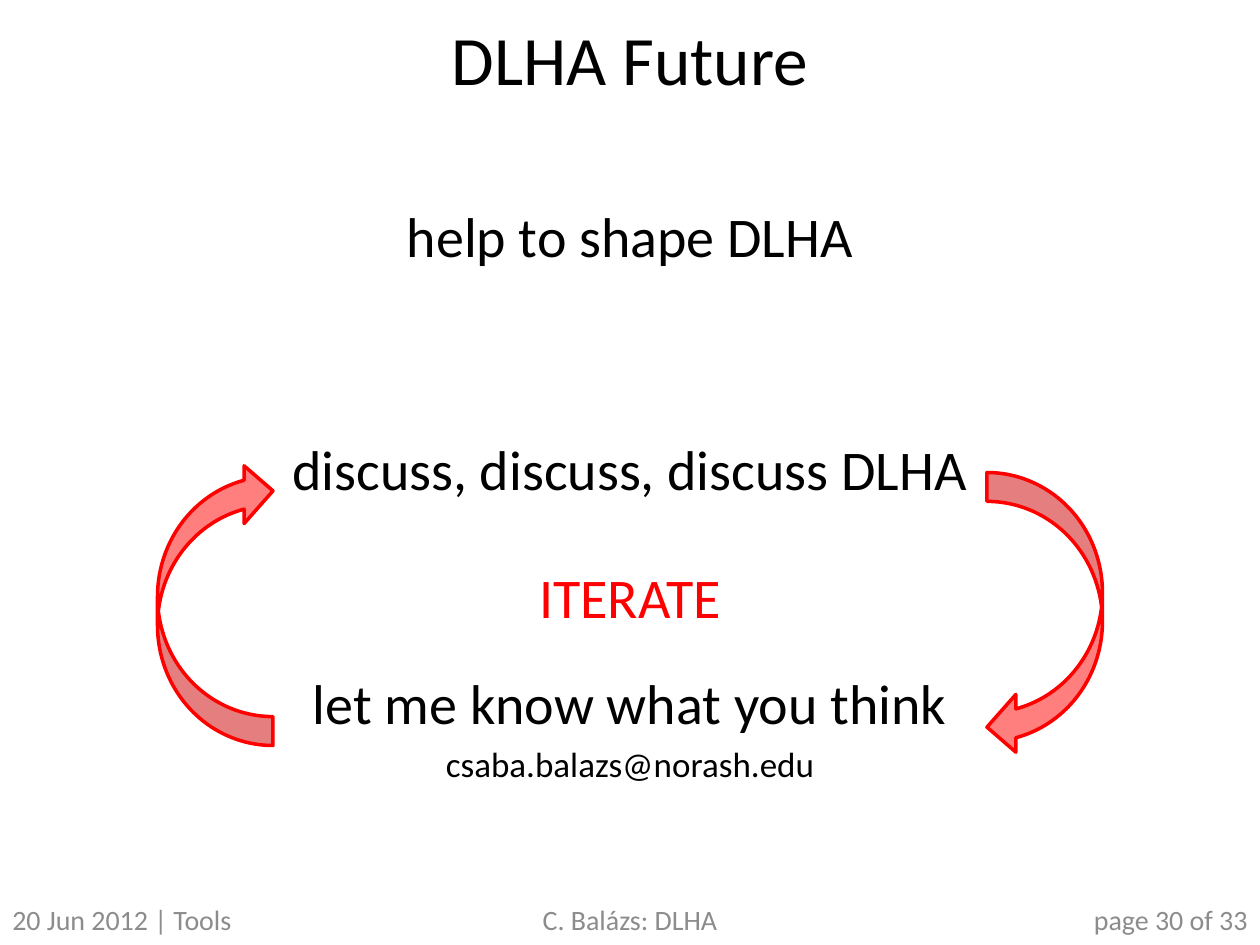
from dataclasses import dataclass

from lxml import etree
from pptx import Presentation
from pptx.dml.color import RGBColor
from pptx.enum.shapes import MSO_SHAPE as Shape
from pptx.enum.text import MSO_ANCHOR as Anchor, PP_ALIGN as Align
from pptx.oxml.ns import qn
from pptx.util import Inches, Pt

COLS, ROWS = 120, 90
WIDTH, HEIGHT = Inches(10), Inches(7.5)


@dataclass(frozen=True)
class Theme:
    font: str = "Calibri"
    ink: str = "000000"
    accent: str = "FF0000"
    muted: str = "8C8C8C"
    title: float = 39.6
    body: float = 32
    small: float = 20
    footer: float = 16
    outline: float = 2
    opacity: int = 50


THEME = Theme()


def place(box):
    col, row, cols, rows = box
    return (int(WIDTH * col / COLS), int(HEIGHT * row / ROWS),
            int(WIDTH * cols / COLS), int(HEIGHT * rows / ROWS))


def add_text(slide, box, lines, color, align=Align.CENTER, anchor=Anchor.TOP):
    tf = slide.shapes.add_textbox(*place(box)).text_frame
    tf.word_wrap = True
    tf.vertical_anchor = anchor
    for i, (text, size, gap) in enumerate(lines):
        p = tf.paragraphs[0] if i == 0 else tf.add_paragraph()
        p.text = text
        p.alignment = align
        p.space_before = Pt(gap)
        p.font.name = THEME.font
        p.font.size = Pt(size)
        p.font.color.rgb = RGBColor.from_string(color)
    return tf


def add_title(slide, box):
    add_text(slide, box, [("DLHA Future", THEME.title, 0)], THEME.ink,
             anchor=Anchor.MIDDLE)


def add_body(slide, box):
    step = 95
    lines = [
        ("help to shape DLHA", THEME.body, 0),
        ("discuss, discuss, discuss DLHA", THEME.body, step),
        ("let me know what you think", THEME.body, step),
        ("csaba.balazs@norash.edu", THEME.small, 4),
    ]
    tf = add_text(slide, box, lines, THEME.ink)
    tf.margin_top = Inches(0.68)


def add_arrow(slide, box, rotation):
    s = slide.shapes.add_shape(Shape.CURVED_LEFT_ARROW, *place(box))
    s.rotation = rotation
    s.shadow.inherit = False
    s.fill.solid()
    s.fill.fore_color.rgb = RGBColor.from_string(THEME.accent)
    color = s.fill._xPr.find(qn("a:solidFill"))[0]
    etree.SubElement(color, qn("a:alpha"), val=str(THEME.opacity * 1000))
    s.line.color.rgb = RGBColor.from_string(THEME.accent)
    s.line.width = Pt(THEME.outline)


def add_cycle(slide, box):
    col, row, cols, rows = box
    arrow_cols, arrow_rows = 11, 27
    add_arrow(slide, (col + cols - arrow_cols, row + 1, arrow_cols, arrow_rows), 0)
    add_arrow(slide, (col, row, arrow_cols, arrow_rows), 180)
    label_cols = 34
    label = (col + (cols - label_cols) / 2, row + 9, label_cols, 7.68)
    add_text(slide, label, [("ITERATE", THEME.body, 0)], THEME.accent)


def add_footer(slide, box):
    col, row, cols, rows = box
    side, gap = 24, 1
    middle = cols - 2 * (side + gap)
    parts = [
        (col, side, "20 Jun 2012 | Tools", Align.LEFT),
        (col + side + gap, middle, "C. Balázs: DLHA", Align.CENTER),
        (col + cols - side, side, "page 30 of 33", Align.RIGHT),
    ]
    for left, width, text, align in parts:
        add_text(slide, (left, row, width, rows), [(text, THEME.footer, 0)],
                 THEME.muted, align, Anchor.MIDDLE)


def main():
    prs = Presentation()
    prs.slide_width, prs.slide_height = WIDTH, HEIGHT
    slide = prs.slides.add_slide(prs.slide_layouts[6])
    add_title(slide, (0, 1, COLS, 9))
    add_body(slide, (1, 11, COLS - 2, 75))
    add_footer(slide, (0, 85.2, COLS, 4.8))
    add_cycle(slide, (15, 44, 90, 28))
    prs.save("out.pptx")


if __name__ == "__main__":
    main()
